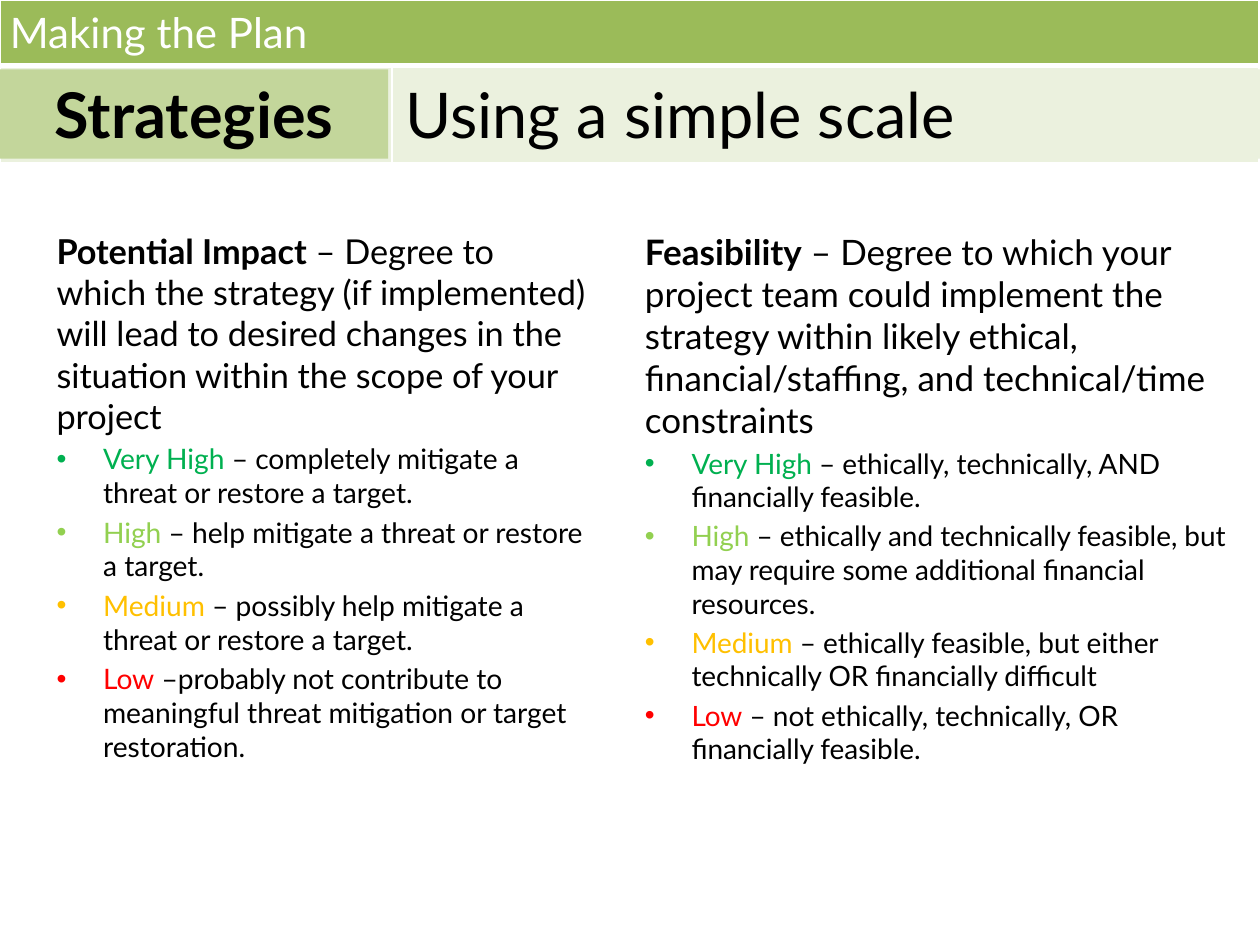
"""Build the slide on rating strategies with a simple scale."""
import pptx
import pptx.dml.color
import pptx.enum.shapes
import pptx.enum.text
import pptx.oxml
import pptx.oxml.ns
import pptx.util

Inches, Pt = pptx.util.Inches, pptx.util.Pt
ALIGN = pptx.enum.text.PP_ALIGN
HUES = {
    "black": "000000", "white": "FFFFFF", "green": "9BBB59",
    "sage": "C3D69B", "pale": "EBF1DE", "Very High": "00B050",
    "High": "92D050", "Medium": "FFC000", "Low": "FF0000",
}
IMPACT = [
    ("Very High", " – completely mitigate a threat or restore a target."),
    ("High", " – help mitigate a threat or restore a target."),
    ("Medium", " – possibly help mitigate a threat or restore a target."),
    ("Low", " –probably not contribute to meaningful threat mitigation or target restoration."),
]
FEASIBLE = [
    ("Very High", " – ethically, technically, AND financially feasible."),
    ("High", " – ethically and technically feasible, but may require some additional financial resources."),
    ("Medium", " – ethically feasible, but either technically OR financially difficult"),
    ("Low", " – not ethically, technically, OR financially feasible."),
]


def color(name):
    return pptx.dml.color.RGBColor.from_string(HUES[name])


def write(para, text, size=16, hue="black", bold=False, face="Lato"):
    run = para.add_run()
    run.text = text
    font = run.font
    font.name, font.size, font.bold = face, Pt(size), bold
    font.color.rgb = color(hue)


def bullet(para):
    props = para._p.get_or_add_pPr()
    props.set("marL", str(Inches(0.37)))
    props.set("indent", str(-Inches(0.37)))
    space = pptx.oxml.ns.nsdecls("a")
    for tag in ('buFont %s typeface="Arial"', 'buChar %s char="•"'):
        props.append(pptx.oxml.parse_xml(f"<a:{tag % space}/>"))


class Deck:
    def __init__(self):
        self.show = pptx.Presentation()
        self.show.slide_width, self.show.slide_height = Inches(10), Inches(7.5)
        self.slide = self.show.slides.add_slide(self.show.slide_layouts[6])

    def edge(self, cell, low, top):
        props = cell._tc.get_or_add_tcPr()
        for side, width in zip("LRTB", (1, 1, top, low)):
            props.append(pptx.oxml.parse_xml(
                f'<a:ln{side} {pptx.oxml.ns.nsdecls("a")} w="{Pt(width)}"><a:solidFill>'
                f'<a:srgbClr val="{HUES["white"]}"/></a:solidFill></a:ln{side}>'))

    def table(self, box, cols, rows, hues):
        grid = self.slide.shapes.add_table(len(rows), len(cols), *map(Inches, box)).table
        grid.first_row = grid.horz_banding = False
        for col, width in zip(grid.columns, cols):
            col.width = Inches(width)
        for i, (row, high) in enumerate(zip(grid.rows, rows)):
            row.height = Inches(high)
            for cell in row.cells:
                self.edge(cell, low=1 if i else 3, top=3 if i else 1)
                cell.fill.solid()
                cell.fill.fore_color.rgb = color(hues[i])
        grid.cell(0, 0).merge(grid.cell(0, len(cols) - 1))

    def text(self, box):
        frame = self.slide.shapes.add_textbox(*map(Inches, box)).text_frame
        frame.word_wrap = True
        return frame

    def panel(self, box, fill, text, align=ALIGN.LEFT, **style):
        kind = pptx.enum.shapes.MSO_SHAPE.RECTANGLE
        shape = self.slide.shapes.add_shape(kind, *map(Inches, box))
        shape.shadow.inherit = False
        shape.fill.solid()
        shape.fill.fore_color.rgb = color(fill)
        shape.line.fill.background()
        frame = shape.text_frame
        frame.word_wrap = True
        frame.vertical_anchor = pptx.enum.text.MSO_ANCHOR.TOP
        para = frame.paragraphs[0]
        para.alignment = align
        write(para, text, **style)

    def scale(self, box, head, gist, items, large, small):
        frame = self.text(box)
        para = frame.paragraphs[0]
        write(para, head, large, bold=True)
        write(para, gist, large)
        for level, note in items:
            para = frame.add_paragraph()
            bullet(para)
            para.space_before = Pt(3.2)
            write(para, level, small, level)
            write(para, note, small)


def main():
    deck = Deck()
    deck.table((0, 0, 9.99, 1.29), (3.11, 6.88), (0.52, 0.77), ("green", "pale"))
    deck.scale((0.35, 1.78, 4.42, 4.95), "Potential Impact",
               " – Degree to which the strategy (if implemented) will lead to desired "
               "changes in the situation within the scope of your project",
               IMPACT, 19.6, 16.1)
    deck.scale((5.02, 1.78, 4.88, 4.95), "Feasibility",
               " – Degree to which your project team could implement the strategy within "
               "likely ethical, financial/staffing, and technical/time constraints",
               FEASIBLE, 20, 16)
    title = deck.text((-0.02, 0, 9.98, 0.51))
    write(title.paragraphs[0], "Making the Plan", 24, "white")
    deck.panel((0, 0.55, 3.08, 0.71), "sage", "Strategies", ALIGN.CENTER, size=36, bold=True)
    deck.panel((3.12, 0.55, 6.88, 0.71), "pale", "Using a simple scale", size=36)
    deck.show.save("out.pptx")


if __name__ == "__main__":
    main()
